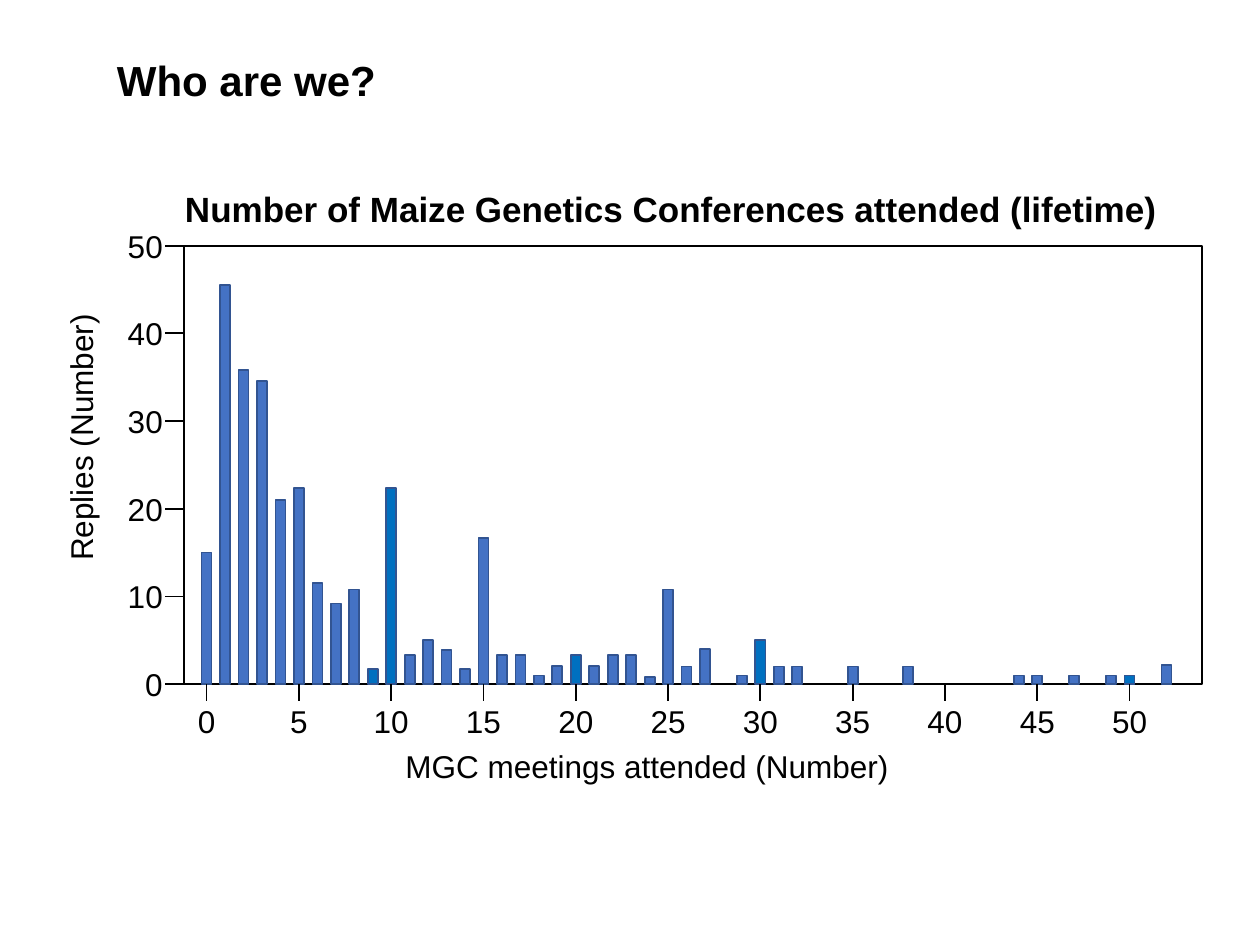
from dataclasses import dataclass

from lxml import etree
from pptx import Presentation
from pptx.dml.color import RGBColor
from pptx.enum import shapes, text
from pptx.oxml import ns
from pptx.util import Inches, Pt

COLORS = {"ink": "000000", "bar": "4472C4", "accent": "0070C0", "edge": "325491"}
FONT = "Arial"
LEFT, TOP, WIDTH, HEIGHT = 1.46, 1.95, 8.08, 3.48
BASE = TOP + HEIGHT
MAX_REPLIES = 50
FIRST_CENTER, PITCH, BAR_WIDTH = 1.64, 0.1465, 0.08
TICK_X, TICK_Y = 0.15, 0.13
LABEL_WIDTH, LABEL_HEIGHT = 0.5, 0.4
ACCENTED = {9, 10, 20, 30, 50}
REPLIES = {
    0: 15, 1: 45.5, 2: 35.8, 3: 34.6, 4: 21, 5: 22.4, 6: 11.5, 7: 9.2, 8: 10.8,
    9: 1.7, 10: 22.4, 11: 3.3, 12: 5, 13: 3.9, 14: 1.7, 15: 16.7, 16: 3.3,
    17: 3.3, 18: 1, 19: 2.1, 20: 3.3, 21: 2.1, 22: 3.3, 23: 3.3, 24: 0.8,
    25: 10.8, 26: 2, 27: 4, 29: 1, 30: 5, 31: 2, 32: 2, 35: 2, 38: 2, 44: 1,
    45: 1, 47: 1, 49: 1, 50: 1, 52: 2.2,
}


@dataclass(frozen=True)
class Box:
    """Place of an element, in inches."""

    left: float
    top: float
    width: float
    height: float

    def lengths(self) -> list[int]:
        """Give the four measures as lengths."""
        return [Inches(v) for v in (self.left, self.top, self.width, self.height)]


@dataclass(frozen=True)
class Bar:
    """Replies from people who attended a number of meetings."""

    meetings: int
    replies: float

    def box(self) -> Box:
        """Work out where the bar stands."""
        y = reply_y(self.replies)
        return Box(meeting_x(self.meetings) - BAR_WIDTH / 2, y, BAR_WIDTH, BASE - y)


def meeting_x(meetings: int) -> float:
    """Give the horizontal position of a number of meetings."""
    return FIRST_CENTER + meetings * PITCH


def reply_y(replies: float) -> float:
    """Give the vertical position of a number of replies."""
    return BASE - replies * HEIGHT / MAX_REPLIES


def rgb(name: str) -> RGBColor:
    """Look up a colour."""
    return RGBColor.from_string(COLORS[name])


def add_text(slide, words: str, box: Box, *, size: int = 18, bold: bool = False,
             align=text.PP_ALIGN.LEFT, wrap: bool = False, rotation: int = 0) -> None:
    """Write one line of text."""
    holder = slide.shapes.add_textbox(*box.lengths())
    holder.rotation = rotation
    frame = holder.text_frame
    frame.word_wrap = wrap
    frame.auto_size = text.MSO_AUTO_SIZE.SHAPE_TO_FIT_TEXT
    paragraph = frame.paragraphs[0]
    paragraph.alignment = align
    run = paragraph.add_run()
    run.text = words
    run.font.name, run.font.size, run.font.bold = FONT, Pt(size), bold
    run.font.color.rgb = rgb("ink")


def add_rectangle(slide, box: Box, edge: str, fill: str | None = None) -> None:
    """Draw an outlined rectangle."""
    rectangle = slide.shapes.add_shape(shapes.MSO_SHAPE.RECTANGLE, *box.lengths())
    rectangle.shadow.inherit = False
    if fill:
        rectangle.fill.solid()
        rectangle.fill.fore_color.rgb = rgb(fill)
    else:
        rectangle.fill.background()
    rectangle.line.color.rgb = rgb(edge)
    rectangle.line.width = Pt(1)


def add_tick(slide, x: float, y: float, dx: float = 0, dy: float = 0) -> None:
    """Draw an axis tick from a point."""
    tick = slide.shapes.add_connector(
        shapes.MSO_CONNECTOR.STRAIGHT,
        Inches(x), Inches(y), Inches(x + dx), Inches(y + dy))
    tick.line.color.rgb = rgb("ink")
    tick.line.width = Pt(1)
    etree.SubElement(tick._element.spPr, ns.qn("a:effectLst"))


def add_axes(slide) -> None:
    """Draw the ticks and numbers of both axes."""
    for meetings in range(0, 51, 5):
        x = meeting_x(meetings)
        add_tick(slide, x, BASE, dy=TICK_Y)
        add_text(slide, str(meetings),
                 Box(x - LABEL_WIDTH / 2, 5.52, LABEL_WIDTH, LABEL_HEIGHT),
                 align=text.PP_ALIGN.CENTER, wrap=True)
    for replies in range(0, MAX_REPLIES + 1, 10):
        y = reply_y(replies)
        add_tick(slide, LEFT, y, dx=-TICK_X)
        add_text(slide, str(replies),
                 Box(0.89, y - LABEL_HEIGHT / 2, LABEL_WIDTH, LABEL_HEIGHT),
                 align=text.PP_ALIGN.RIGHT, wrap=True)


def main() -> None:
    """Build the slide and save it."""
    deck = Presentation()
    deck.slide_width, deck.slide_height = Inches(10), Inches(7.5)
    slide = deck.slides.add_slide(deck.slide_layouts[6])
    add_text(slide, "Who are we?", Box(0.83, 0.38, 2.35, 0.5), size=24, bold=True)
    add_text(slide, "Number of Maize Genetics Conferences attended (lifetime)",
             Box(1.37, 1.44, 7.97, 0.44), size=20, bold=True)
    add_text(slide, "Replies (Number)", Box(-0.45, 3.26, 2.18, 0.4), rotation=270)
    add_text(slide, "MGC meetings attended (Number)", Box(3.12, 5.88, 4.2, 0.4))
    add_rectangle(slide, Box(LEFT, TOP, WIDTH, HEIGHT), "ink")
    for bar in (Bar(*pair) for pair in REPLIES.items()):
        fill = "accent" if bar.meetings in ACCENTED else "bar"
        add_rectangle(slide, bar.box(), "edge", fill)
    add_axes(slide)
    deck.save("out.pptx")


if __name__ == "__main__":
    main()
